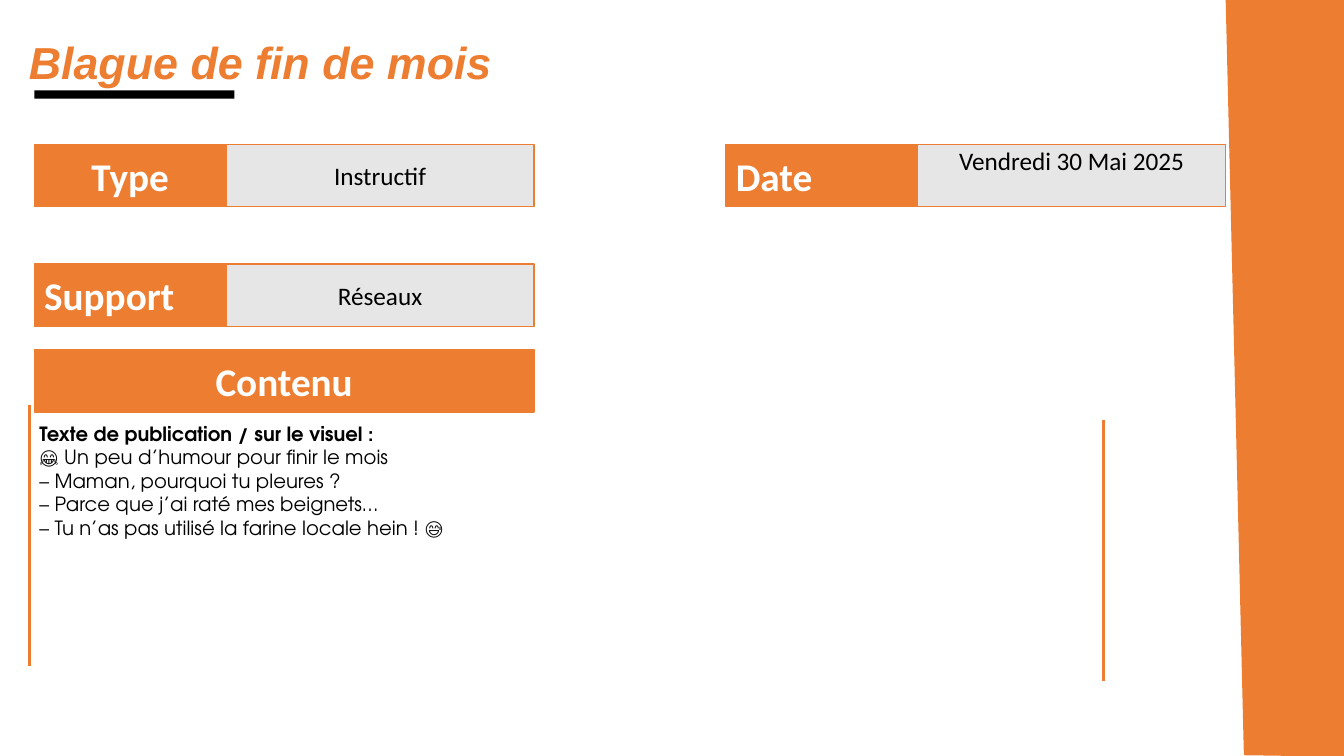
"""Build the editorial planning slide for the end-of-month joke post."""
from dataclasses import dataclass

from lxml import etree
from pptx import Presentation
from pptx.dml.color import RGBColor
from pptx.enum import shapes, text
from pptx.oxml.ns import qn
from pptx.util import Pt


@dataclass(frozen=True)
class Theme:
    """Colours, fonts and type sizes of the slide."""
    accent: RGBColor = RGBColor(0xED, 0x7D, 0x31)
    panel: RGBColor = RGBColor(0xE7, 0xE6, 0xE6)
    black: RGBColor = RGBColor(0, 0, 0)
    white: RGBColor = RGBColor(255, 255, 255)
    title_font: str = "Arial"
    field_font: str = "Calibri"
    body_font: str = "TeX Gyre Adventor"
    title_size: float = 32
    label_size: float = 28
    value_size: float = 18
    body_size: float = 14


THEME = Theme()
LEFT, FIELD_HEIGHT = 24.5, 44.6
LABEL_WIDTH, VALUE_WIDTH = 137, 220
CENTER, START = text.PP_ALIGN.CENTER, text.PP_ALIGN.LEFT
MIDDLE, TOP = text.MSO_ANCHOR.MIDDLE, text.MSO_ANCHOR.TOP
POST = [
    "Texte de publication / sur le visuel :",
    "😂 Un peu d’humour pour finir le mois",
    "– Maman, pourquoi tu pleures ?",
    "– Parce que j’ai raté mes beignets…",
    "– Tu n’as pas utilisé la farine locale hein ! 😅",
]


def write(shape, lines, *, font, size, color, bold_lines=0, italic=False,
          align=START, anchor=TOP, margin_top=3.6):
    """Write lines as paragraphs, the first bold_lines of them in bold."""
    frame = shape.text_frame
    frame.word_wrap = True
    frame.vertical_anchor = anchor
    frame.margin_top = Pt(margin_top)
    for index, line in enumerate(lines):
        paragraph = frame.add_paragraph() if index else frame.paragraphs[0]
        paragraph.alignment = align
        run = paragraph.add_run()
        run.text = line
        run.font.name = font
        run.font.size = Pt(size)
        run.font.bold = index < bold_lines
        run.font.italic = italic
        run.font.color.rgb = color


def paint(shape, fill, line=None):
    """Give a shape a flat fill and an optional outline."""
    shape.shadow.inherit = False
    shape.fill.solid()
    shape.fill.fore_color.rgb = fill
    if line is None:
        shape.line.fill.background()
    else:
        shape.line.color.rgb = line
        shape.line.width = Pt(1)


def add_box(slide, left, top, width, height, fill, line=None):
    """Add a painted rectangle."""
    box = slide.shapes.add_shape(shapes.MSO_SHAPE.RECTANGLE,
                                 Pt(left), Pt(top), Pt(width), Pt(height))
    paint(box, fill, line)
    return box


def add_label(slide, left, top, width, label, align):
    """Add an accent box with a bold label."""
    box = add_box(slide, left, top, width, FIELD_HEIGHT, THEME.accent, THEME.accent)
    write(box, [label], font=THEME.field_font, size=THEME.label_size,
          color=THEME.white, bold_lines=1, align=align, anchor=MIDDLE)


def add_field(slide, left, top, label, value, align=START, **value_format):
    """Add a label box followed by its value box."""
    box = add_box(slide, left + LABEL_WIDTH, top, VALUE_WIDTH, FIELD_HEIGHT,
                  THEME.panel, THEME.accent)
    write(box, [value], font=THEME.field_font, size=THEME.value_size,
          color=THEME.black, align=CENTER, **value_format)
    add_label(slide, left, top, LABEL_WIDTH, label, align)


def add_rule(slide, x, top, height):
    """Add a vertical accent rule."""
    rule = slide.shapes.add_connector(shapes.MSO_CONNECTOR.STRAIGHT,
                                      Pt(x), Pt(top), Pt(x), Pt(top + height))
    rule.line.color.rgb = THEME.accent
    rule.line.width = Pt(2.25)
    etree.SubElement(rule._element.spPr, qn("a:effectLst"))


def add_side_band(slide):
    """Add the slanted band along the right edge."""
    builder = slide.shapes.build_freeform(Pt(876), Pt(0))
    corners = [(960, 0), (960, 540), (889, 539)]
    builder.add_line_segments([(Pt(x), Pt(y)) for x, y in corners], close=True)
    paint(builder.convert_to_shape(), THEME.accent, THEME.accent)


def add_text(slide, left, top, width, height, lines, **text_format):
    """Add a text box."""
    box = slide.shapes.add_textbox(Pt(left), Pt(top), Pt(width), Pt(height))
    write(box, lines, **text_format)


def main():
    """Assemble and save the slide."""
    presentation = Presentation()
    presentation.slide_width, presentation.slide_height = Pt(960), Pt(540)
    slide = presentation.slides.add_slide(presentation.slide_layouts[6])

    add_side_band(slide)
    add_box(slide, LEFT, 64.6, 143, 5.8, THEME.black)
    add_field(slide, LEFT, 103, "Type", "Instructif", align=CENTER, anchor=MIDDLE)
    add_field(slide, 518.5, 103, "Date", "Vendredi 30 Mai 2025", margin_top=1)
    add_field(slide, LEFT, 188.5, "Support", "Réseaux", anchor=MIDDLE)
    add_rule(slide, 21, 289.5, 186.5)
    add_label(slide, LEFT, 249.8, LABEL_WIDTH + VALUE_WIDTH, "Contenu", CENTER)
    add_rule(slide, 788, 300, 186.5)
    add_text(slide, 21, 297.5, 773, 92, POST, font=THEME.body_font,
             size=THEME.body_size, color=THEME.black, bold_lines=1)
    add_text(slide, 13.5, 18, 794, 37.5, ["Blague de fin de mois"],
             font=THEME.title_font, size=THEME.title_size, color=THEME.accent,
             bold_lines=1, italic=True, align=text.PP_ALIGN.JUSTIFY, margin_top=6.5)
    presentation.save("out.pptx")


if __name__ == "__main__":
    main()
